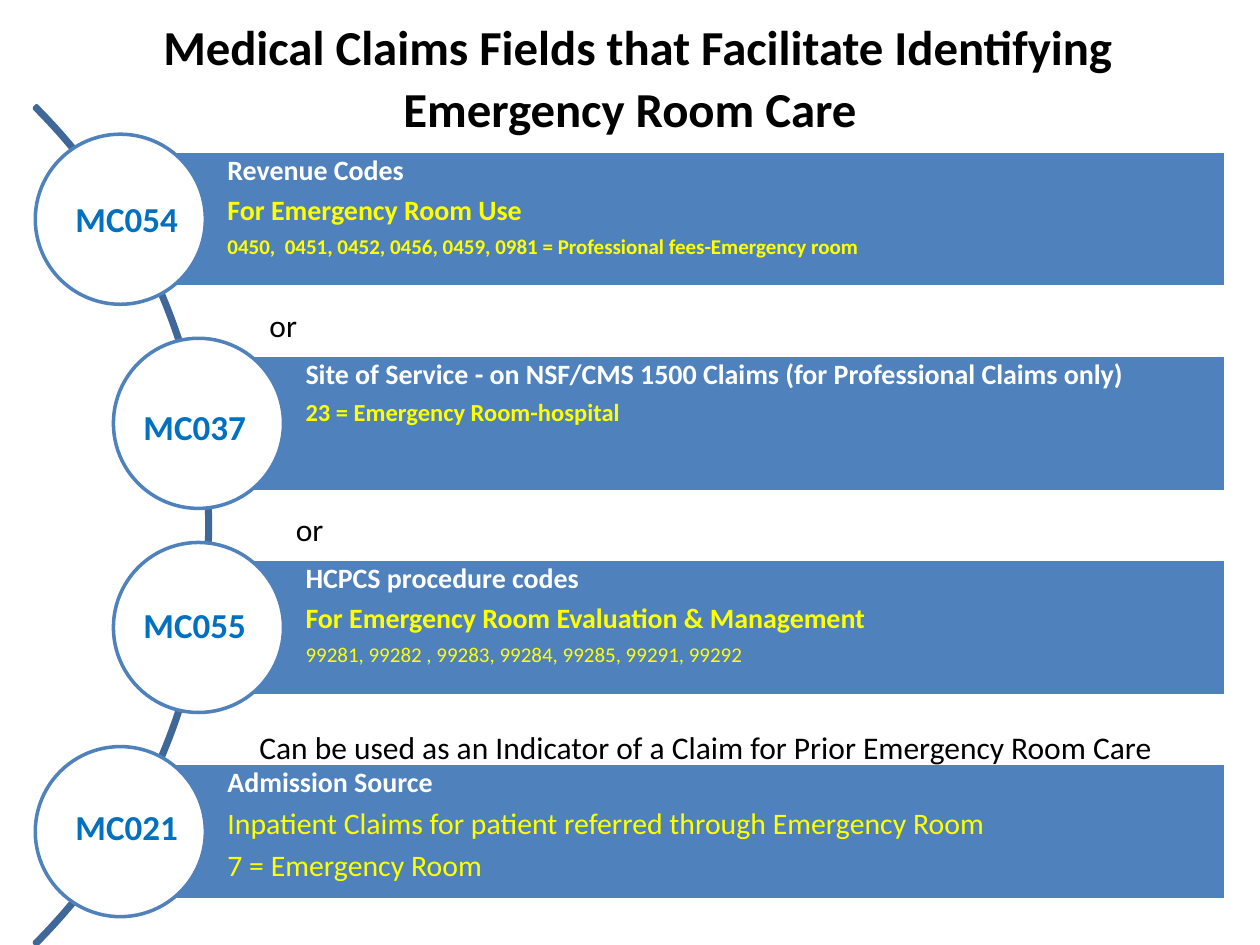
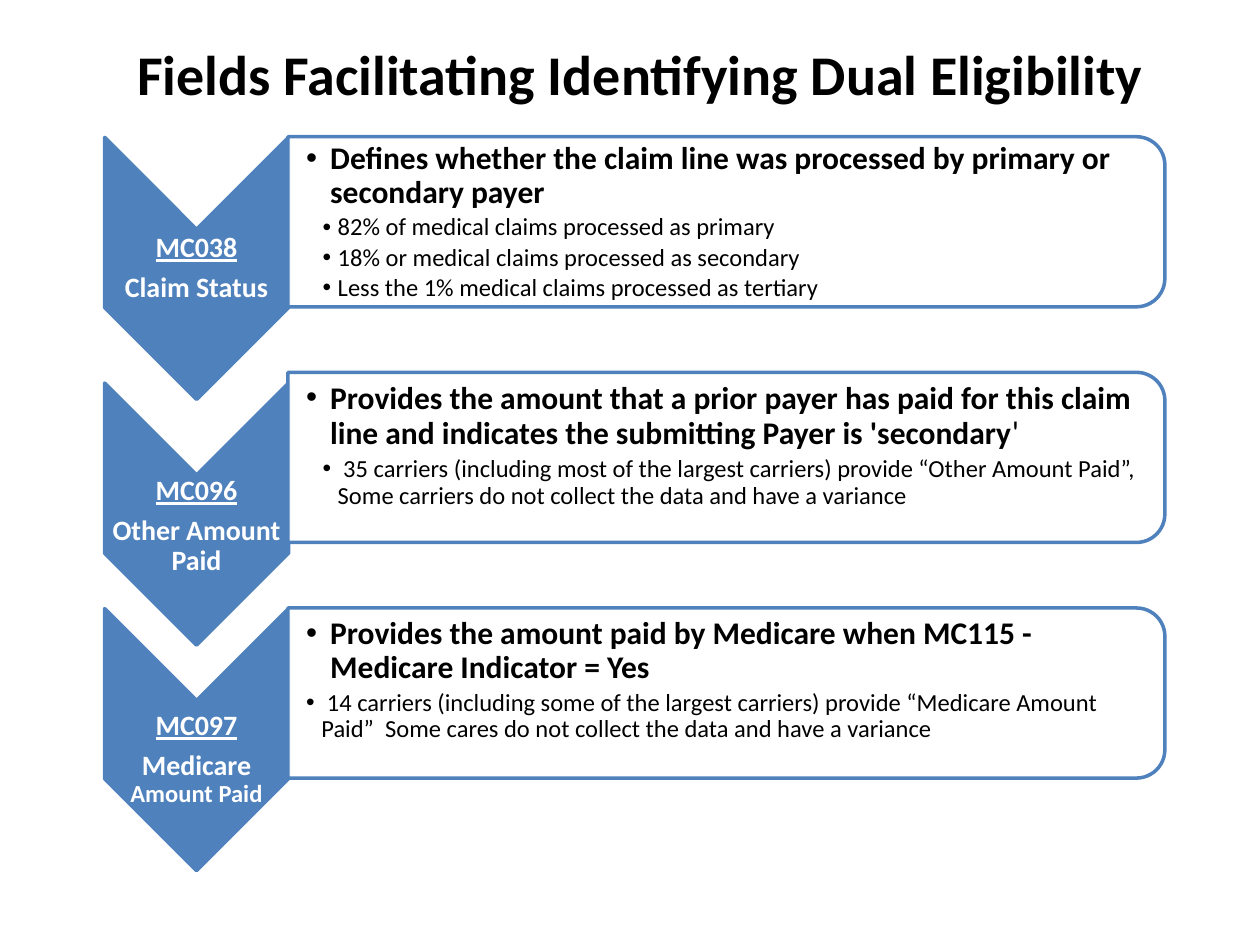
from dataclasses import dataclass
from typing import Optional

from lxml.etree import SubElement
from pptx import Presentation
from pptx.dml.color import RGBColor
from pptx.enum.shapes import MSO_SHAPE
from pptx.enum.text import MSO_ANCHOR, MSO_AUTO_SIZE, PP_ALIGN
from pptx.oxml.ns import qn
from pptx.util import Inches, Pt


@dataclass(frozen=True)
class Theme:
    font: str = "Calibri"
    blue: str = "4F81BD"
    arc: str = "3F6797"
    code: str = "0070C0"
    accent: str = "FFFF00"
    white: str = "FFFFFF"
    black: str = "000000"
    outline: float = 2
    title_large: float = 32
    title_small: float = 27.9
    title_indent: float = 39.6
    code_size: float = 20
    lead: float = 18
    quote: float = 19
    emphasis: float = 17
    heading: float = 16
    detail: float = 14
    small: float = 12


THEME = Theme()


@dataclass(frozen=True)
class Span:
    text: str
    size: float
    color: str = THEME.black
    bold: bool = False
    underline: bool = False


@dataclass(frozen=True)
class Para:
    spans: tuple[Span, ...]
    spacing: float = 1.0
    after: float = 0.0
    align: PP_ALIGN = PP_ALIGN.LEFT
    indent: float = 0.0
    hanging: float = 0.0


@dataclass(frozen=True)
class Area:
    left: float
    top: float
    width: float
    height: float

    def lengths(self) -> tuple:
        return tuple(Inches(value) for value in (self.left, self.top, self.width, self.height))


@dataclass(frozen=True)
class FieldBar:
    code: str
    circle_left: float
    code_left: float
    code_top: float
    paras: tuple[Para, ...]


@dataclass(frozen=True)
class FieldPanel:
    chevron_top: float
    label_top: float
    label: tuple[Para, ...]
    anchor: MSO_ANCHOR
    bullets: tuple[Para, ...]


def add_span(para, text: str, *, size: float, color: str, bold: bool = False,
             underline: bool = False) -> None:
    span = para.add_run()
    span.text = text
    span.font.name = THEME.font
    span.font.size = Pt(size)
    span.font.bold = bold
    span.font.underline = underline
    span.font.color.rgb = RGBColor.from_string(color)


def write_paras(frame, paras: tuple[Para, ...], *, insets=(0.1, 0.05, 0.1, 0.05),
                anchor: MSO_ANCHOR = MSO_ANCHOR.TOP, wrap: bool = True) -> None:
    frame.word_wrap = wrap
    frame.auto_size = MSO_AUTO_SIZE.NONE if wrap else MSO_AUTO_SIZE.SHAPE_TO_FIT_TEXT
    frame.vertical_anchor = anchor
    frame.margin_left, frame.margin_top, frame.margin_right, frame.margin_bottom = map(Inches, insets)
    for index, item in enumerate(paras):
        para = frame.add_paragraph() if index else frame.paragraphs[0]
        para.alignment = item.align
        para.line_spacing = item.spacing
        para.space_after = Pt(round(item.after * item.spans[0].size, 1))
        if item.hanging:
            properties = para._p.get_or_add_pPr()
            properties.set("marL", str(Inches(item.indent)))
            properties.set("indent", str(-Inches(item.hanging)))
            SubElement(properties, qn("a:buFont")).set("typeface", "Arial")
            SubElement(properties, qn("a:buChar")).set("char", "•")
        for span in item.spans:
            add_span(para, span.text, size=span.size, color=span.color,
                     bold=span.bold, underline=span.underline)


def add_text(page, area: Area, paras: tuple[Para, ...], **layout) -> None:
    write_paras(page.shapes.add_textbox(*area.lengths()).text_frame, paras, **layout)


def add_outlined(page, kind: MSO_SHAPE, area: Area, *, line: str, fill: Optional[str] = None,
                 rotation: float = 0, opacity: Optional[int] = None):
    shape = page.shapes.add_shape(kind, *area.lengths())
    shape.shadow.inherit = False
    shape.rotation = rotation
    shape.line.color.rgb = RGBColor.from_string(line)
    shape.line.width = Pt(THEME.outline)
    if fill is None:
        shape.fill.background()
    else:
        shape.fill.solid()
        shape.fill.fore_color.rgb = RGBColor.from_string(fill)
    if opacity is not None:
        color = shape._element.spPr.find(qn("a:solidFill"))[0]
        SubElement(color, qn("a:alpha")).set("val", str(opacity * 1000))
    return shape


def add_page(deck, area: Area, *spans: Span):
    page = deck.slides.add_slide(deck.slide_layouts[5])
    title = page.shapes.title
    title.left, title.top, title.width, title.height = area.lengths()
    write_paras(title.text_frame, (Para(spans, align=PP_ALIGN.CENTER),), anchor=MSO_ANCHOR.MIDDLE)
    return page


def bar_para(text: str, size: float, color: str = THEME.accent, bold: bool = True) -> Para:
    return Para((Span(text, size, color, bold),), spacing=0.9, after=0.35)


def bar_heading(text: str) -> Para:
    return bar_para(text, THEME.heading, THEME.white)


def label(code: str, *names: Span) -> tuple[Para, ...]:
    code_span = Span(code, THEME.heading, THEME.white, True, True)
    return tuple(Para(spans, 0.9, 0.35, PP_ALIGN.CENTER) for spans in ((code_span,), names))


def label_name(text: str, size: float = THEME.heading) -> Span:
    return Span(text, size, THEME.white, True)


def lead_bullet(text: str, *extra: Span) -> Para:
    return Para((Span(text, THEME.lead, bold=True), *extra), 0.9, 0.15, indent=0.19, hanging=0.19)


def detail_bullet(text: str, indent: float = 0.25) -> Para:
    return Para((Span(text, THEME.detail),), 0.9, 0.15, indent=indent, hanging=0.12)


BARS = (
    FieldBar("MC054", 0.28, 0.5, 1.52, (
        bar_heading("Revenue Codes"),
        bar_para("For Emergency Room Use", THEME.heading),
        bar_para("0450,  0451, 0452, 0456, 0459, 0981 = Professional fees-Emergency room", THEME.small))),
    FieldBar("MC037", 0.9, 1.04, 3.17, (
        bar_heading("Site of Service - on NSF/CMS 1500 Claims (for Professional Claims only)"),
        bar_para("23 = Emergency Room-hospital", THEME.detail))),
    FieldBar("MC055", 0.9, 1.04, 4.74, (
        bar_heading("HCPCS procedure codes"),
        bar_para("For Emergency Room Evaluation & Management", THEME.heading),
        bar_para("99281, 99282 , 99283, 99284, 99285, 99291, 99292", THEME.small, bold=False))),
    FieldBar("MC021", 0.28, 0.5, 6.34, (
        bar_heading("Admission Source"),
        bar_para("Inpatient Claims for patient referred through Emergency Room", THEME.emphasis, bold=False),
        bar_para("7 = Emergency Room", THEME.emphasis, bold=False))),
)

NOTES = (
    ("Can be used as an Indicator of a Claim for Prior Emergency Room Care", Area(1.96, 5.73, 7.37, 0.4)),
    ("or", Area(2.04, 2.38, 0.42, 0.4)),
    ("or", Area(2.25, 4, 0.42, 0.4)),
)

PANELS = (
    FieldPanel(1.4, 1.82, label("MC038", label_name("Claim Status")), MSO_ANCHOR.MIDDLE, (
        lead_bullet("Defines whether the claim line was processed by primary or secondary payer"),
        detail_bullet("82% of medical claims processed as primary"),
        detail_bullet("18% or medical claims processed as secondary"),
        detail_bullet("Less the 1% medical claims processed as tertiary"))),
    FieldPanel(3.35, 3.87, label("MC096", label_name("Other Amount Paid")), MSO_ANCHOR.TOP, (
        lead_bullet("Provides the amount that a prior payer has paid for this claim line and "
                    "indicates the submitting Payer is 'secondary", Span("'", THEME.quote)),
        detail_bullet(" 35 carriers (including most of the largest carriers) provide “Other Amount Paid”, "
                      "Some carriers do not collect the data and have a variance"))),
    FieldPanel(5.14, 5.72, label("MC097", label_name("Medicare "), label_name("Amount Paid", THEME.detail)),
               MSO_ANCHOR.TOP, (
        lead_bullet("Provides the amount paid by Medicare when MC115 - Medicare Indicator = Yes"),
        detail_bullet(" 14 carriers (including some of the largest carriers) provide “Medicare Amount "
                      "Paid”  Some cares do not collect the data and have a variance", indent=0.12))),
)


def build_emergency_page(deck) -> None:
    page = add_page(
        deck, Area(0.75, 0.25, 8.5, 0.56),
        Span(" ", THEME.title_indent, bold=True),
        Span("Medical Claims Fields that Facilitate Identifying Emergency Room Care",
             THEME.title_small, bold=True))
    arc = add_outlined(page, MSO_SHAPE.BLOCK_ARC, Area(-7.75, -0.54, 9.42, 9.42), line=THEME.arc)
    for index, value in enumerate((189, 27, 0.003)):
        arc.adjustments[index] = value

    first_top, pitch, right_edge, bar_height, diameter = 1.2, 1.62, 9.73, 1.08, 1.35
    for index, field in enumerate(BARS):
        top = first_top + index * pitch
        left = field.circle_left + diameter / 2
        bar = add_outlined(page, MSO_SHAPE.RECTANGLE, Area(left, top, right_edge - left, bar_height),
                           line=THEME.white, fill=THEME.blue)
        write_paras(bar.text_frame, field.paras, insets=(0.85, 0.04, 0.04, 0.04))
        circle_top = top + (bar_height - diameter) / 2
        add_outlined(page, MSO_SHAPE.OVAL, Area(field.circle_left, circle_top, diameter, diameter),
                     line=THEME.blue, fill=THEME.white)
        code = Span(field.code, THEME.code_size, THEME.code, True)
        add_text(page, Area(field.code_left, field.code_top, 1.02, 0.44), (Para((code,)),), wrap=False)
    for text, area in NOTES:
        add_text(page, area, (Para((Span(text, THEME.lead),)),), wrap=False)


def build_eligibility_page(deck) -> None:
    page = add_page(deck, Area(0.17, -0.01, 9.83, 1.18),
                    Span("Fields Facilitating Identifying Dual Eligibility", THEME.title_large, bold=True))
    first_panel_top, first_text_top, pitch = -1.72, 1.15, 1.87
    margin = 0.01
    for index, field in enumerate(PANELS):
        offset = index * pitch
        add_outlined(page, MSO_SHAPE.CHEVRON, Area(0.52, field.chevron_top, 2.08, 1.46),
                     line=THEME.blue, fill=THEME.blue, rotation=90)
        add_text(page, Area(0.83, field.label_top, 1.46, 0.62), field.label,
                 insets=(margin,) * 4, anchor=MSO_ANCHOR.MIDDLE)
        add_outlined(page, MSO_SHAPE.ROUND_2_SAME_RECTANGLE,
                     Area(5.09, first_panel_top + offset, 1.35, 6.96),
                     line=THEME.blue, fill=THEME.white, rotation=90, opacity=90)
        add_text(page, Area(2.29, first_text_top + offset, 6.89, 1.22), field.bullets,
                 insets=(0.14, margin, margin, margin), anchor=field.anchor)


def main() -> None:
    deck = Presentation()
    deck.slide_width, deck.slide_height = Inches(10), Inches(7.5)
    build_emergency_page(deck)
    build_eligibility_page(deck)
    deck.save("out.pptx")


if __name__ == "__main__":
    main()
